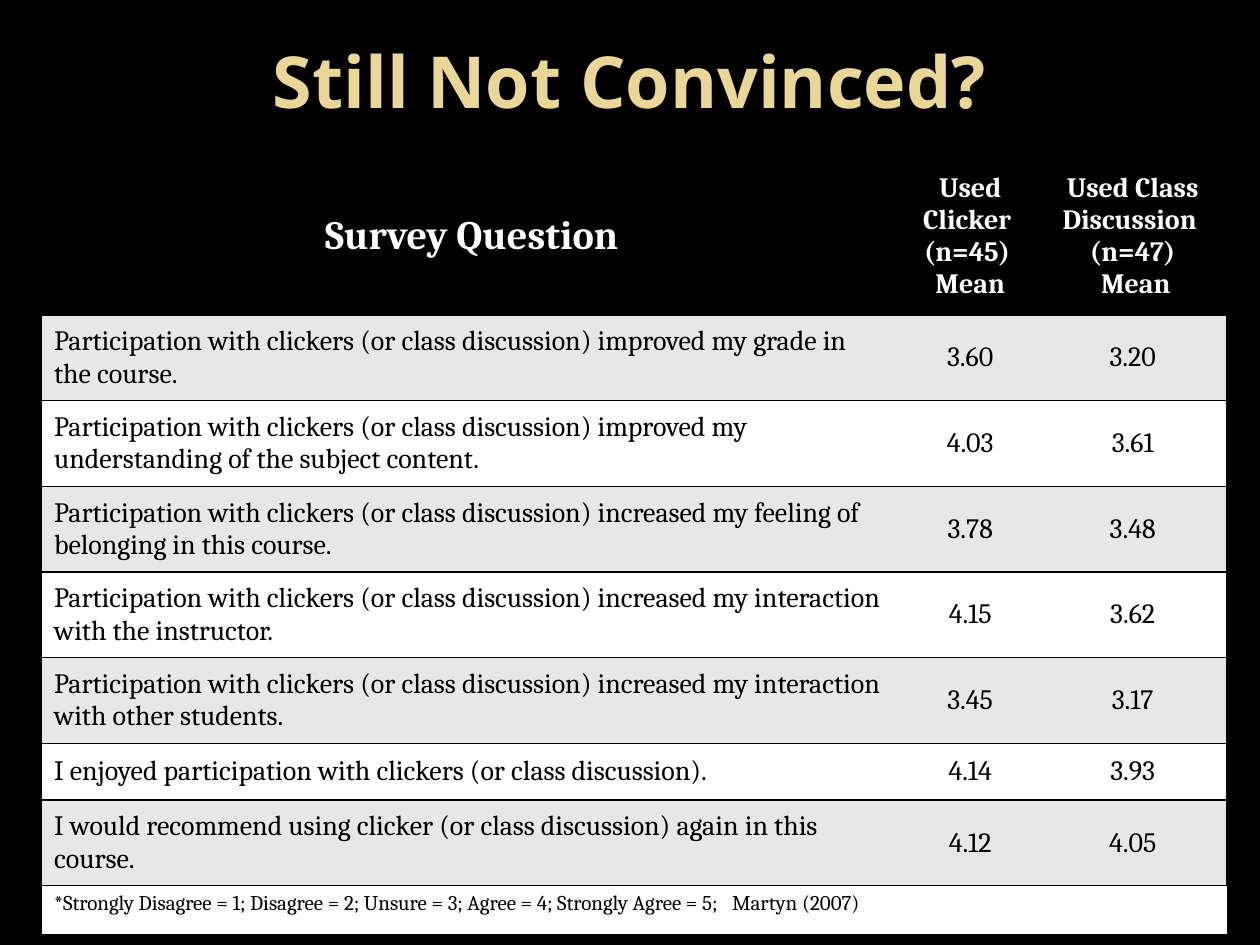
"""Build the survey results slide comparing clickers with class discussion."""
from lxml import etree
from pptx import Presentation
from pptx.dml.color import RGBColor
from pptx.enum.text import MSO_ANCHOR, PP_ALIGN
from pptx.oxml.ns import qn
from pptx.util import Inches, Pt

LEFT, CENTER = PP_ALIGN.LEFT, PP_ALIGN.CENTER
TOP, MIDDLE = MSO_ANCHOR.TOP, MSO_ANCHOR.MIDDLE
BLACK = RGBColor(0, 0, 0)
WHITE = RGBColor(255, 255, 255)
GRAY = RGBColor(0xE7, 0xE7, 0xE7)
GOLD = RGBColor(0xEA, 0xD6, 0x96)

TITLE = "Still Not Convinced?"
HEADER = ("Survey Question", "Used Clicker \n(n=45) \nMean",
          "Used Class Discussion \n(n=47)\n Mean")
CLICKERS = "Participation with clickers (or class discussion) "
ANSWERS = [
    (CLICKERS + "improved my grade in the course.", "3.60", "3.20"),
    (CLICKERS + "improved my understanding of the subject content.", "4.03", "3.61"),
    (CLICKERS + "increased my feeling of belonging in this course.", "3.78", "3.48"),
    (CLICKERS + "increased my interaction with the instructor.", "4.15", "3.62"),
    (CLICKERS + "increased my interaction with other students.", "3.45", "3.17"),
    ("I enjoyed participation with clickers (or class discussion).", "4.14", "3.93"),
    ("I would recommend using clicker (or class discussion) again in this course.",
     "4.12", "4.05"),
]
SCALE = ("*Strongly Disagree = 1; Disagree = 2; Unsure = 3; Agree = 4; "
         "Strongly Agree = 5;\tMartyn (2007)")
COLS = (6.83, 1.08, 1.5)
ROWS = (1.25, 0.68, 0.68, 0.68, 0.68, 0.68, 0.45, 0.68, 0.39)
SOURCE_TAB = 5.38


def style(p, name, size, color, bold, align):
    p.alignment = align
    f = p.font
    f.name, f.size, f.bold = name, Pt(size), bold
    f.color.rgb = color


def set_borders(cell, visible):
    tcPr = cell._tc.get_or_add_tcPr()
    for side in "LRTB":
        ln = etree.SubElement(tcPr, qn(f"a:ln{side}"), w=str(Pt(1)))
        if side in visible:
            fill = etree.SubElement(ln, qn("a:solidFill"))
            etree.SubElement(fill, qn("a:srgbClr"), val=str(BLACK))
        else:
            etree.SubElement(ln, qn("a:noFill"))


def fill_cell(cell, text, size, color, bold, align, anchor=MIDDLE):
    cell.text = text
    cell.vertical_anchor = anchor
    for p in cell.text_frame.paragraphs:
        style(p, "Cambria", size, color, bold, align)


def add_survey_table(s):
    frame = s.shapes.add_table(len(ROWS), len(COLS), Inches(0.33), Inches(1.25),
                               Inches(sum(COLS)), Inches(sum(ROWS)))
    table = frame.table
    for col, width in zip(table.columns, COLS):
        col.width = Inches(width)
    for row, height in zip(table.rows, ROWS):
        row.height = Inches(height)

    last = len(COLS) - 1
    for r in range(len(ROWS)):
        back = BLACK if r == 0 else GRAY if r % 2 else WHITE
        for c in range(len(COLS)):
            cell = table.cell(r, c)
            set_borders(cell, "TB" + "L" * (c == 0) + "R" * (c == last))
            cell.fill.solid()
            cell.fill.fore_color.rgb = back

    for c, text in enumerate(HEADER):
        fill_cell(table.cell(0, c), text, 16 if c else 23, WHITE, True, CENTER)
    for r, answer in enumerate(ANSWERS, 1):
        for c, text in enumerate(answer):
            fill_cell(table.cell(r, c), text, 16, BLACK, False, CENTER if c else LEFT)

    note = table.cell(len(ROWS) - 1, 0)
    note.merge(table.cell(len(ROWS) - 1, last))
    fill_cell(note, SCALE, 12, BLACK, False, LEFT, TOP)
    tabs = etree.Element(qn("a:tabLst"))
    etree.SubElement(tabs, qn("a:tab"), pos=str(Inches(SOURCE_TAB)), algn="l")
    note.text_frame.paragraphs[0]._p.get_or_add_pPr().insert(0, tabs)


def main():
    prs = Presentation()
    prs.slide_width, prs.slide_height = Inches(10), Inches(7.5)
    s = prs.slides.add_slide(prs.slide_layouts[5])
    s.background.fill.solid()
    s.background.fill.fore_color.rgb = BLACK

    title = s.shapes.title
    title.left, title.top = Inches(0.5), Inches(0.17)
    title.width, title.height = Inches(9), Inches(0.92)
    tf = title.text_frame
    tf.text = TITLE
    tf.vertical_anchor = MIDDLE
    style(tf.paragraphs[0], "Open Sans", 41, GOLD, True, CENTER)

    add_survey_table(s)
    prs.save("out.pptx")


if __name__ == "__main__":
    main()
